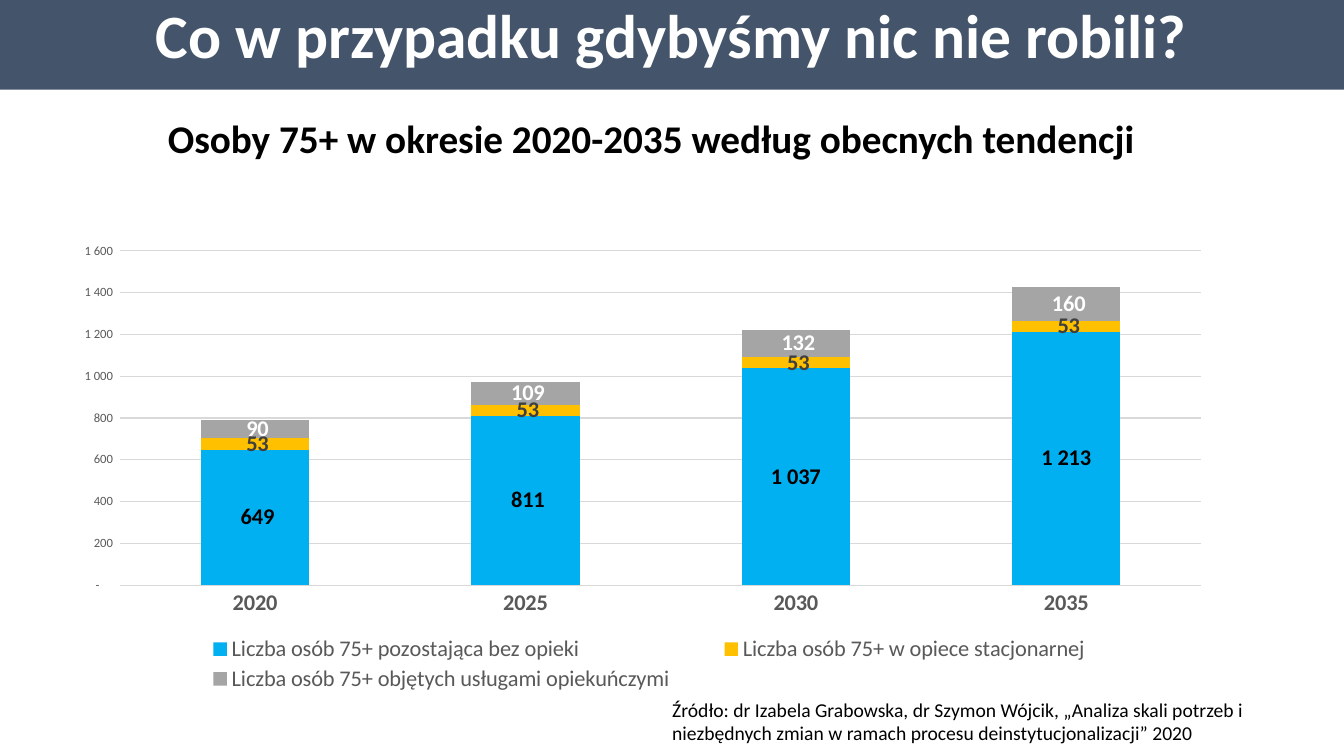
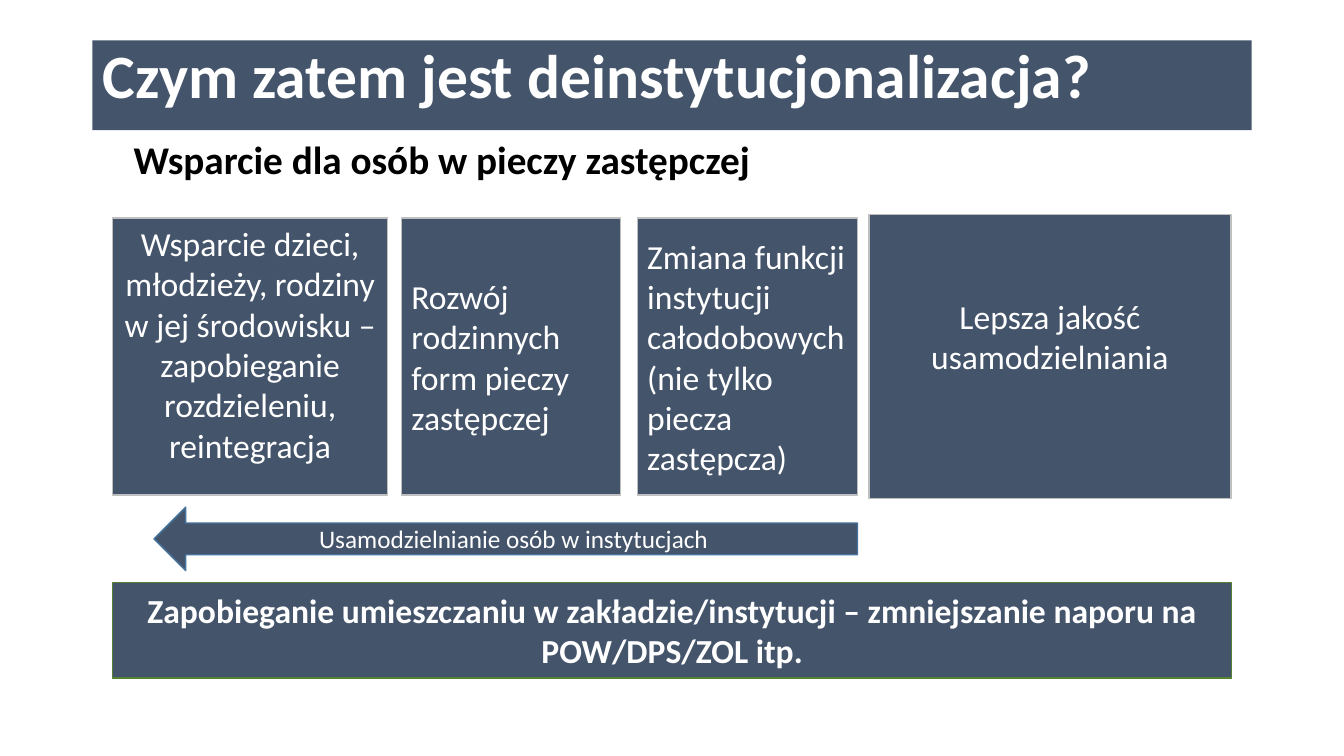
from pptx import Presentation
from pptx import util as u
from pptx.chart.data import CategoryChartData
from pptx.dml.color import RGBColor
from pptx.enum import chart as charts, shapes, text
from pptx.oxml import parse_xml

FONT = "Calibri"
NAVY, WHITE, BLACK = "44546A", "FFFFFF", "000000"
GREY_TEXT, GRID, BOX_EDGE = "595959", "D9D9D9", "BFBFBF"
ARROW_EDGE, GREEN_EDGE = "43739E", "548235"
LEFT, CENTER = text.PP_ALIGN.LEFT, text.PP_ALIGN.CENTER
TOP, MIDDLE = text.MSO_ANCHOR.TOP, text.MSO_ANCHOR.MIDDLE
TITLE_HEIGHT = 2.26
NUMBER_FORMAT = '_(* #\\ ##0_);_(* \\(#\\ ##0\\);_(* "-"??_)'
CHART_NS = "http://schemas.openxmlformats.org/drawingml/2006/chart"


def color(hex_string):
    return RGBColor.from_string(hex_string)


def cm_box(box):
    return [u.Cm(length) for length in box]


def style_font(font, size, hex_string, bold=False):
    font.name = FONT
    font.size = u.Pt(size)
    font.bold = bold
    font.color.rgb = color(hex_string)


def write(frame, words, size, hex_string, bold=False, align=LEFT, anchor=TOP):
    frame.word_wrap = True
    frame.auto_size = text.MSO_AUTO_SIZE.NONE
    frame.vertical_anchor = anchor
    paragraph = frame.paragraphs[0]
    paragraph.alignment = align
    run = paragraph.add_run()
    run.text = words
    style_font(run.font, size, hex_string, bold)
    return paragraph


def add_title(slide, box, words, align):
    """Navy title band."""
    title = slide.shapes.title
    title.left, title.top, title.width, title.height = cm_box(box)
    title.fill.solid()
    title.fill.fore_color.rgb = color(NAVY)
    paragraph = write(title.text_frame, words, 44, WHITE, True, align)
    paragraph.line_spacing = 0.9


def add_text(slide, box, words, size, bold=False):
    frame = slide.shapes.add_textbox(*cm_box(box)).text_frame
    write(frame, words, size, BLACK, bold)


def add_panel(slide, box, words, edge=BOX_EDGE, size=24, bold=False,
              align=CENTER, preset=shapes.MSO_SHAPE.RECTANGLE, lift=0):
    """Navy shape with white text; lift adds room below the text."""
    panel = slide.shapes.add_shape(preset, *cm_box(box))
    panel.shadow.inherit = False
    panel.fill.solid()
    panel.fill.fore_color.rgb = color(NAVY)
    panel.line.color.rgb = color(edge)
    panel.line.width = u.Pt(1)
    panel.text_frame.margin_bottom = u.Cm(0.13 + lift)
    write(panel.text_frame, words, size, WHITE, bold, align, MIDDLE)


def place_part(part, position, box, target=""):
    """Fix a chart part's box, in fractions of the chart."""
    for old in part.findall(f"{{{CHART_NS}}}layout"):
        part.remove(old)
    sizes = "".join(f'<c:{tag} val="{value}"/>'
                    for tag, value in zip("xywh", box))
    part.insert(position, parse_xml(
        f'<c:layout xmlns:c="{CHART_NS}"><c:manualLayout>{target}'
        '<c:xMode val="edge"/><c:yMode val="edge"/>'
        f'{sizes}</c:manualLayout></c:layout>'))


def add_care_chart(slide, box):
    """Stacked columns of people aged 75+ by type of care."""
    groups = [
        ("Liczba osób 75+ pozostająca bez opieki",
         (649, 811, 1037, 1213), "00B0F0", BLACK),
        ("Liczba osób 75+ w opiece stacjonarnej",
         (53, 53, 53, 53), "FFC000", "404040"),
        ("Liczba osób 75+ objętych usługami opiekuńczymi",
         (90, 109, 132, 160), "A5A5A5", WHITE),
    ]
    data = CategoryChartData(number_format=NUMBER_FORMAT)
    data.categories = ["2020", "2025", "2030", "2035"]
    for name, values, _, _ in groups:
        data.add_series(name, values)
    chart = slide.shapes.add_chart(
        charts.XL_CHART_TYPE.COLUMN_STACKED, *cm_box(box), data).chart
    style_font(chart.font, 10, BLACK)
    chart.has_title = False

    # Columns and their labels
    plot = chart.plots[0]
    place_part(plot._element.getparent(), 0, (0.05, 0.02, 0.94, 0.7),
               '<c:layoutTarget val="inner"/>')
    plot.gap_width, plot.overlap = 150, 100
    plot.vary_by_categories = False
    for series, (_, _, fill, label_color) in zip(plot.series, groups):
        series.format.fill.solid()
        series.format.fill.fore_color.rgb = color(fill)
        labels = series.data_labels
        labels.show_value = True
        labels.number_format = NUMBER_FORMAT
        labels.number_format_is_linked = False
        style_font(labels.font, 16, label_color, True)

    # Axes
    years, people = chart.category_axis, chart.value_axis
    for axis in (years, people):
        axis.major_tick_mark = axis.minor_tick_mark = charts.XL_TICK_MARK.NONE
    style_font(years.tick_labels.font, 16, GREY_TEXT, True)
    style_font(people.tick_labels.font, 9, GREY_TEXT)
    people.minimum_scale, people.maximum_scale = 0, 1600
    people.major_unit = 200
    people.tick_labels.number_format = NUMBER_FORMAT
    people.tick_labels.number_format_is_linked = False
    people.format.line.fill.background()
    for line in (years.format.line, people.major_gridlines.format.line):
        line.color.rgb = color(GRID)
        line.width = u.Pt(0.75)

    # Legend, kept clear of the source note
    chart.has_legend = True
    chart.legend.position = charts.XL_LEGEND_POSITION.BOTTOM
    chart.legend.include_in_layout = False
    style_font(chart.legend.font, 16, GREY_TEXT)
    place_part(chart.legend._element, 1, (0.09, 0.82, 0.84, 0.13))


def add_support_boxes(slide, left, top, height):
    """Row of three support boxes and a slightly taller result box."""
    supports = [
        (0, 6.93, "Wsparcie dzieci, młodzieży, rodziny w jej środowisku – "
         "zapobieganie rozdzieleniu, reintegracja", CENTER, 0.64),
        (7.28, 5.52, "Rozwój rodzinnych form pieczy zastępczej", LEFT, 0),
        (13.22, 5.55, "Zmiana funkcji instytucji całodobowych "
         "(nie tylko piecza zastępcza)", LEFT, 0),
    ]
    for offset, width, words, align, lift in supports:
        add_panel(slide, (left + offset, top, width, height), words,
                  align=align, lift=lift)
    add_panel(slide, (left + 19.06, top - 0.09, 9.12, height + 0.18),
              "Lepsza jakość usamodzielniania", lift=1.03)


def build_forecast(slide, width):
    add_title(slide, (0, 0, width, TITLE_HEIGHT),
              "Co w przypadku gdybyśmy nic nie robili?", CENTER)
    add_care_chart(slide, (1.57, 6.08, 29, 12.04))
    add_text(slide, (3.98, 2.75, 25.05, 1.45),
             "Osoby 75+ w okresie 2020-2035 według obecnych tendencji",
             28, True)
    add_text(slide, (16.69, 17.45, 16.95, 1.45),
             "Źródło: dr Izabela Grabowska, dr Szymon Wójcik, „Analiza skali "
             "potrzeb i niezbędnych zmian w ramach procesu "
             "deinstytucjonalizacji” 2020", 14)


def build_definition(slide, left):
    add_title(slide, (2.33, 1.02, 29.21, TITLE_HEIGHT),
              "Czym zatem jest deinstytucjonalizacja?", LEFT)
    add_text(slide, (3.12, 3.28, 27.9, 1.45),
             "Wsparcie dla osób w pieczy zastępczej", 28, True)
    add_support_boxes(slide, left, 5.49, 6.99)
    add_panel(slide, (left + 1.04, 12.78, 17.73, 1.6),
              "Usamodzielnianie osób w instytucjach", ARROW_EDGE, 18,
              preset=shapes.MSO_SHAPE.LEFT_ARROW)
    add_panel(slide, (left, 14.68, 28.2, 2.41),
              "Zapobieganie umieszczaniu w zakładzie/instytucji – "
              "zmniejszanie naporu na POW/DPS/ZOL itp.", GREEN_EDGE, bold=True)


def main():
    deck = Presentation()
    deck.slide_width, deck.slide_height = u.Cm(33.87), u.Cm(19.05)
    title_only = deck.slide_layouts[5]
    build_forecast(deck.slides.add_slide(title_only), 33.87)
    build_definition(deck.slides.add_slide(title_only), 2.84)
    deck.save("out.pptx")


if __name__ == "__main__":
    main()
